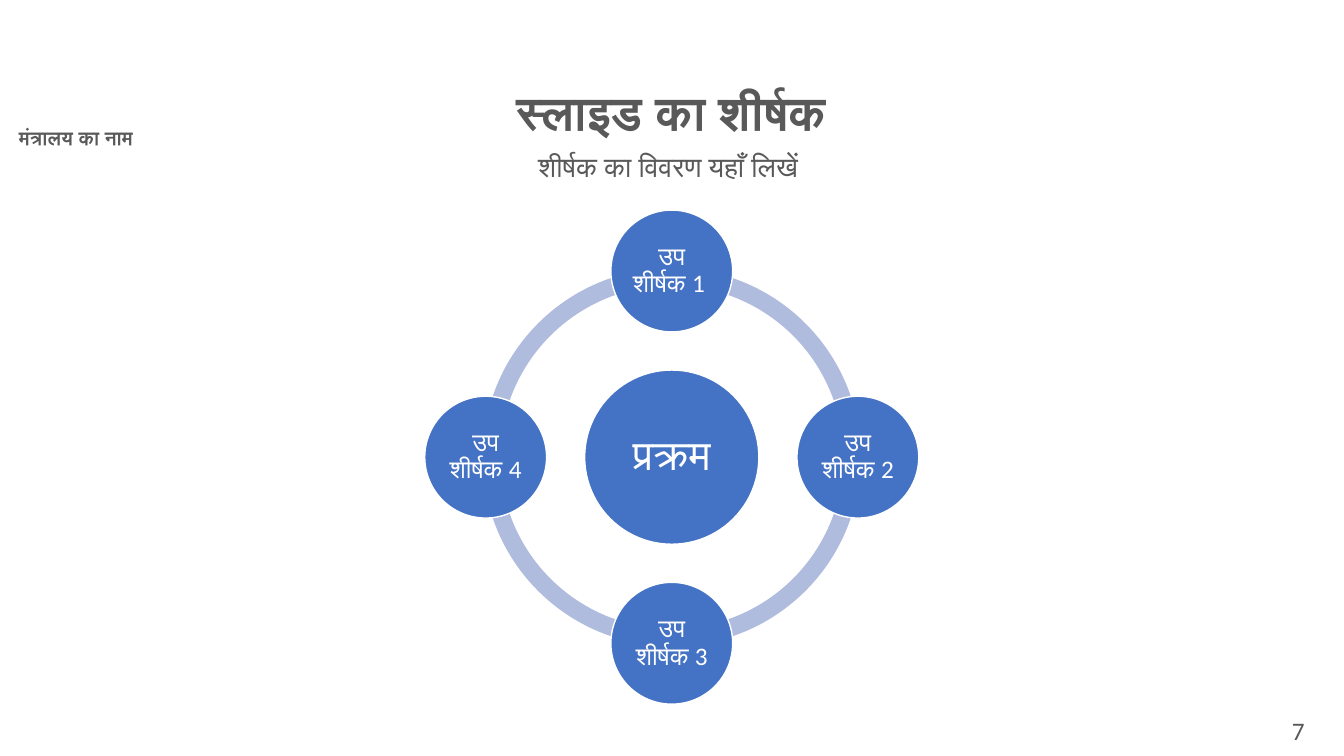
from math import cos, radians, sin

from pptx import Presentation
from pptx.dml.color import RGBColor
from pptx.enum.shapes import MSO_SHAPE as Kind
from pptx.enum.text import MSO_ANCHOR as Anchor, MSO_AUTO_SIZE as Fit, PP_ALIGN as Align
from pptx.util import Cm, Pt

GREY, BLUE, PALE, WHITE = "595959", "4472C4", "B0BCDE", "FFFFFF"
TITLE = ("स्लाइड का शीर्षक", (4.72, 2.13, 24.41, 1.4), 34, True)
DETAIL = ("शीर्षक का विवरण यहाँ लिखें ", (4.72, 3.73, 24.41, 1.6), 20, False)
OFFICE = ("मंत्रालय का नाम", (-0.28, 3.12, 4.39, 0.89), 14, True)
NUMBER = ("7", (31.55, 17.91, 2.34, 1.14), 18, False)
HUB = "प्रक्रम"
NODES = ["उप शीर्षक 1 ", "उप शीर्षक 2", "उप शीर्षक 3", "उप शीर्षक 4"]

MID_X, MID_Y = 16.93, 11.52
ORBIT, RING, HUB_W, NODE_W = 4.69, 9.53, 4.39, 3.07
QUARTER, FULL = 54, 216


def color(code):
    return RGBColor.from_string(code)


def style(frame, text, size, tint, bold=False, name="Calibri", line=0.9):
    frame.text = text
    frame.word_wrap = True
    frame.auto_size = Fit.NONE
    para = frame.paragraphs[0]
    para.alignment = Align.CENTER
    para.line_spacing = line
    para.space_before = Pt(0)
    font = para.runs[0].font
    font.name, font.size, font.bold = name, Pt(size), bold
    font.color.rgb = color(tint)
    return para


def place(shape, box):
    shape.left, shape.top, shape.width, shape.height = map(Cm, box)


def label(shape, item, **opts):
    text, box, size, bold = item
    place(shape, box)
    shape.text_frame.vertical_anchor = Anchor.TOP
    return style(shape.text_frame, text, size, GREY, bold, **opts)


def draw(kind, x, y, width, fill):
    shape = slide.shapes.add_shape(
        kind, Cm(x - width / 2), Cm(y - width / 2), Cm(width), Cm(width))
    shape.shadow.inherit = False
    shape.fill.solid()
    shape.fill.fore_color.rgb = color(fill)
    return shape


def disc(text, x, y, width, size, inset):
    shape = draw(Kind.OVAL, x, y, width, BLUE)
    shape.line.color.rgb = color(WHITE)
    shape.line.width = Pt(1)
    frame = shape.text_frame
    frame.margin_left = frame.margin_right = Cm(inset)
    frame.margin_top = frame.margin_bottom = Cm(inset)
    frame.vertical_anchor = Anchor.MIDDLE
    style(frame, text, size, WHITE)


deck = Presentation()
deck.slide_width, deck.slide_height = Cm(33.87), Cm(19.05)
slide = deck.slides.add_slide(deck.slide_layouts[1])

label(slide.shapes.title, TITLE)
para = label(slide.placeholders[1], DETAIL)
props = para._p.get_or_add_pPr()
props.set("marL", "0")
props.set("indent", "0")
props.append(props.makeelement(
    "{http://schemas.openxmlformats.org/drawingml/2006/main}buNone", {}))
label(slide.shapes.add_textbox(0, 0, 0, 0), OFFICE, name="Roboto")

for turn in range(len(NODES)):
    arc = draw(Kind.BLOCK_ARC, MID_X, MID_Y, RING, PALE)
    arc.line.fill.background()
    start = turn * QUARTER
    arc.adjustments[0] = start
    arc.adjustments[1] = (start + QUARTER) % FULL
    arc.adjustments[2] = 0.046

disc(HUB, MID_X, MID_Y, HUB_W, 30, 0.1)
for turn, text in enumerate(NODES):
    angle = radians(turn * 360 / len(NODES) - 90)
    disc(text, MID_X + ORBIT * cos(angle), MID_Y + ORBIT * sin(angle),
         NODE_W, 18, 0.08)

label(slide.shapes.add_textbox(0, 0, 0, 0), NUMBER, line=1.0)
deck.save("out.pptx")
